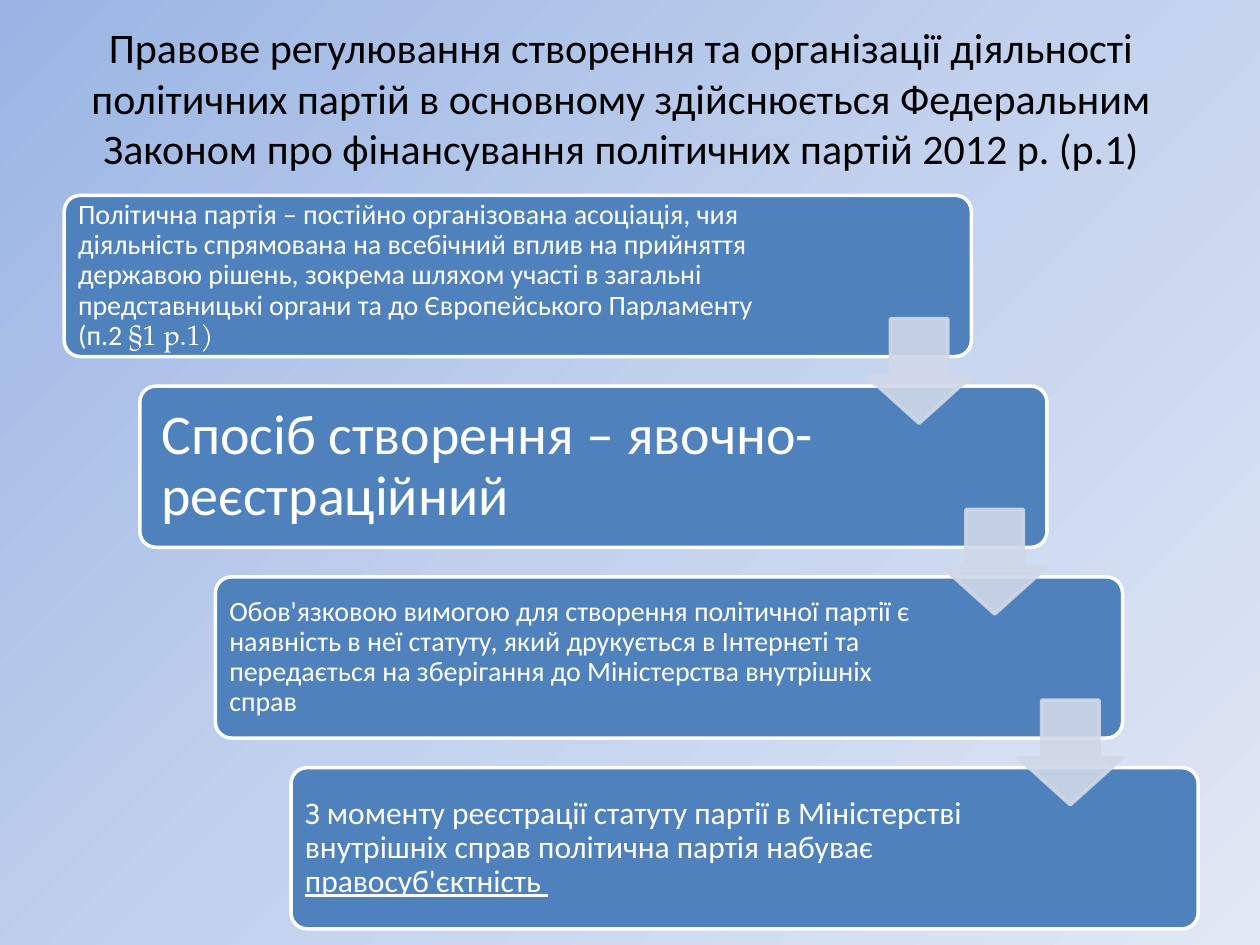
from copy import deepcopy
from dataclasses import dataclass

from lxml import etree
from pptx import Presentation
from pptx.dml.color import RGBColor
from pptx.enum import shapes, text
from pptx.oxml import ns
from pptx.util import Inches, Pt


@dataclass(frozen=True)
class Theme:
    font: str = "Calibri"
    section_font: str = "TeX Gyre Pagella"
    title_size: int = 24
    small: int = 16
    medium: int = 18
    large: int = 32
    outline: int = 2
    ink: RGBColor = RGBColor.from_string("000000")
    white: RGBColor = RGBColor.from_string("FFFFFF")
    step: RGBColor = RGBColor.from_string("4F81BD")
    arrow: RGBColor = RGBColor.from_string("D0D8E8")
    backdrop: tuple = ((0, "9AB5E4"), (0.5, "C2D1ED"), (1, "E1E8F5"))


theme = Theme()


def add_text(box, inset, runs, size, color, align, spacing):
    """Write one paragraph; each run is (words, font name, underlined)."""
    left, top, width, height = (Inches(length) for length in box)
    frame = slide.shapes.add_textbox(left, top, width, height).text_frame
    frame.word_wrap = True
    frame.vertical_anchor = text.MSO_ANCHOR.MIDDLE
    frame.margin_left = frame.margin_right = Inches(inset)
    frame.margin_top = frame.margin_bottom = Inches(min(inset, 0.13))
    paragraph = frame.paragraphs[0]
    paragraph.alignment = align
    paragraph.line_spacing = spacing
    for words, font, underlined in runs:
        run = paragraph.add_run()
        run.text = words
        run.font.name = font
        run.font.size = Pt(size)
        run.font.color.rgb = color
        if underlined:
            run.font.underline = True


def add_block(kind, box, adjustments, fill, line):
    """Draw a filled, outlined shape without shadow."""
    block = slide.shapes.add_shape(kind, *(Inches(length) for length in box))
    block.shadow.inherit = False
    for index, value in enumerate(adjustments):
        block.adjustments[index] = value
    block.fill.solid()
    block.fill.fore_color.rgb = fill
    block.line.color.rgb = line
    block.line.width = Pt(theme.outline)
    return block


prs = Presentation()
prs.slide_width, prs.slide_height = Inches(10), Inches(7.5)
slide = prs.slides.add_slide(prs.slide_layouts[6])

# Diagonal background gradient with three stops
backdrop = slide.background.fill
backdrop.gradient()
backdrop.gradient_angle = 315
stop_list = slide.background._cSld.find(".//" + ns.qn("a:gsLst"))
stop_list.append(deepcopy(stop_list[-1]))
for stop, (position, color) in zip(backdrop.gradient_stops, theme.backdrop):
    stop.position = position
    stop.color.rgb = RGBColor.from_string(color)

# Title
title = ("Правове регулювання створення та організації діяльності політичних партій "
         "в основному здійснюється Федеральним Законом про фінансування політичних "
         "партій 2012 р. (р.1)")
add_text((0.43, 0.01, 9, 1.53), 0.1, [(title, theme.font, False)],
         theme.title_size, theme.ink, text.PP_ALIGN.CENTER, 1)

# Staircase of steps: size, inset, runs
steps = [
    (theme.small, 0.07, [
        ("Політична партія – постійно організована асоціація, чия діяльність спрямована "
         "на всебічний вплив на прийняття державою рішень, зокрема шляхом участі в "
         "загальні представницькі органи та до Європейського Парламенту (п.2 ",
         theme.font, False),
        ("§1 р.1)", theme.section_font, False)]),
    (theme.large, 0.13, [("Спосіб створення – явочно-реєстраційний", theme.font, False)]),
    (theme.small, 0.07, [
        ("Обов'язковою вимогою для створення політичної партії є наявність в неї статуту, "
         "який друкується в Інтернеті та передається на зберігання до Міністерства "
         "внутрішніх справ", theme.font, False)]),
    (theme.medium, 0.07, [
        ("З моменту реєстрації статуту партії в Міністерстві внутрішніх справ політична "
         "партія набуває ", theme.font, False),
        ("правосуб'єктність ", theme.font, True)]),
]
first_left, first_top = 0.51, 1.55
shift_right, shift_down = 0.6, 1.514
step_width, step_height = 7.2, 1.28

for number, (size, inset, runs) in enumerate(steps):
    left = first_left + number * shift_right
    top = first_top + number * shift_down
    add_block(shapes.MSO_SHAPE.ROUNDED_RECTANGLE, (left, top, step_width, step_height),
              [0.1], theme.step, theme.white)
    add_text((left + 0.04, top + 0.035, 5.7, 1.21), inset, runs, size, theme.white,
             text.PP_ALIGN.LEFT, 0.9)

# Slightly transparent arrows from each step to the next
arrow_size = 0.83
for number in range(len(steps) - 1):
    left = first_left + step_width - arrow_size + number * shift_right
    top = first_top + 0.98 + number * shift_down
    arrow = add_block(shapes.MSO_SHAPE.DOWN_ARROW, (left, top, arrow_size, arrow_size),
                      [0.55, 0.45], theme.arrow, theme.arrow)
    for color in arrow._element.spPr.iter(ns.qn("a:srgbClr")):
        etree.SubElement(color, ns.qn("a:alpha"), val="90000")

prs.save("out.pptx")
